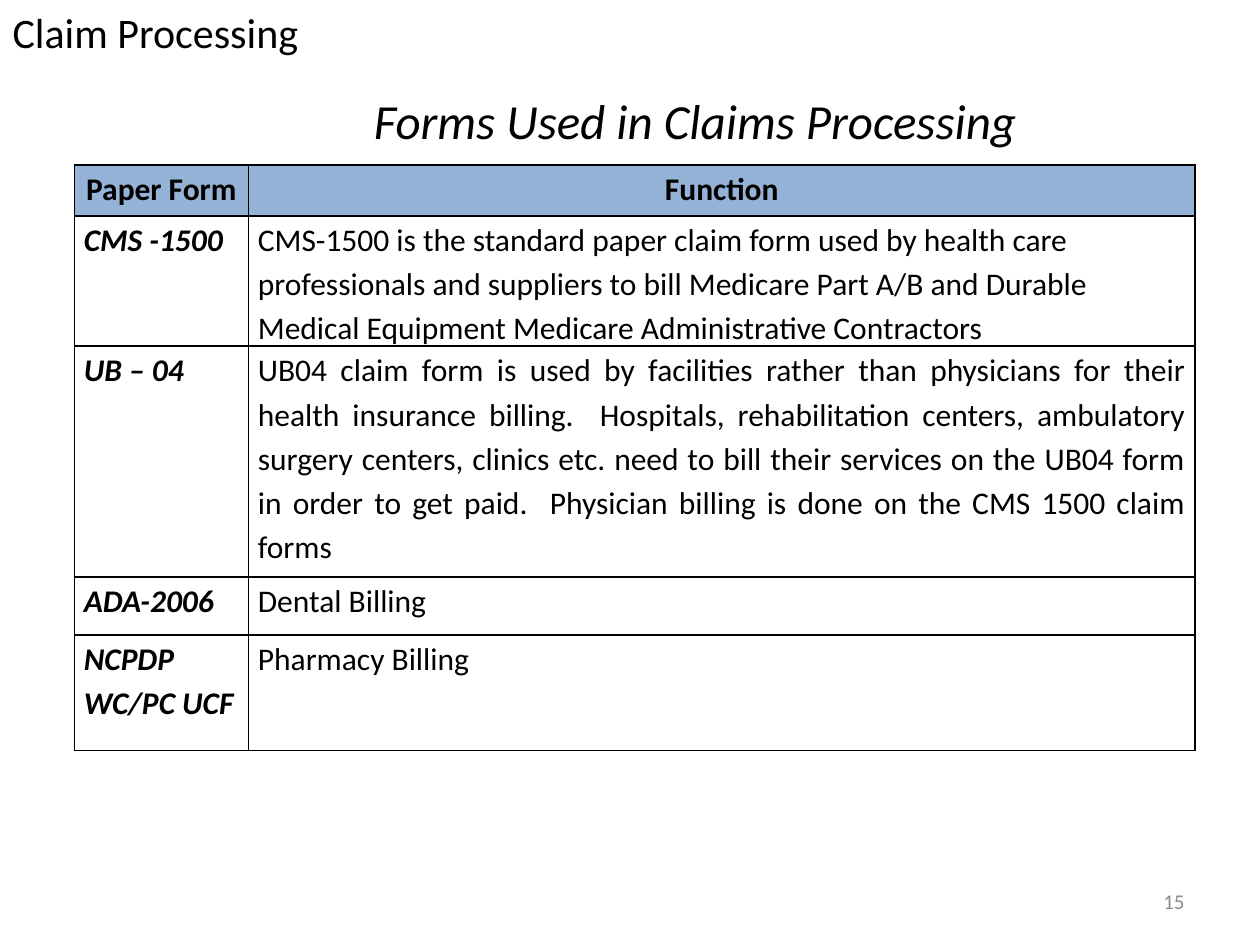
from lxml.etree import SubElement
from pptx import Presentation
from pptx.dml.color import RGBColor
from pptx.enum.text import MSO_ANCHOR, PP_ALIGN
from pptx.oxml.ns import qn
from pptx.util import Pt

# Content
TITLE = "Claim Processing"
SUBTITLE = "Forms Used in Claims Processing"
PAGE_NUMBER = "15"
HEADER = ("Paper Form", "Function")
FORMS = [
    ("CMS -1500", "CMS-1500 is the standard paper claim form used by health care "
     "professionals and suppliers to bill Medicare Part A/B and Durable "
     "Medical Equipment Medicare Administrative Contractors"),
    ("UB – 04", "UB04 claim form is used by facilities rather than physicians for "
     "their health insurance billing.  Hospitals, rehabilitation centers, "
     "ambulatory surgery centers, clinics etc. need to bill their services on "
     "the UB04 form in order to get paid.  Physician billing is done on the "
     "CMS 1500 claim forms"),
    ("ADA-2006", "Dental Billing"),
    ("NCPDP WC/PC UCF", "Pharmacy Billing"),
]
JUSTIFIED_FORM = "UB – 04"

# Layout and formats
TABLE_LEFT, TABLE_TOP = 42.5, 94.3
COLUMN_WIDTHS = (99.5, 541)
ROW_HEIGHTS = (29, 62, 132, 33, 66)
BLACK, GREY, HEADER_BLUE = "000000", "8C8C8C", "95B3D7"
HEADER_FORMAT = {"size": Pt(18), "bold": True, "italic": False}
NAME_FORMAT = {"size": Pt(18), "bold": True, "italic": True}
FUNCTION_FORMAT = {"size": Pt(18), "bold": False, "italic": False}


def color(hex_value):
    return RGBColor.from_string(hex_value)


def write(frame, text, formats, align=PP_ALIGN.LEFT, text_color=BLACK):
    para = frame.paragraphs[0]
    para.alignment = align
    span = para.add_run()
    span.text = text
    span.font.name = "Calibri"
    span.font.color.rgb = color(text_color)
    for name, value in formats.items():
        setattr(span.font, name, value)
    return para


def place(shape, left, top, width, height):
    bounds = {"left": left, "top": top, "width": width, "height": height}
    for name, value in bounds.items():
        setattr(shape, name, Pt(value))


def add_borders(cell):
    properties = cell._tc.get_or_add_tcPr()
    for position, side in enumerate(("a:lnL", "a:lnR", "a:lnT", "a:lnB")):
        line = SubElement(properties, qn(side), w=str(Pt(1)))
        fill = SubElement(line, qn("a:solidFill"))
        SubElement(fill, qn("a:srgbClr"), val=BLACK)
        properties.insert(position, line)


def fill_cell(cell, text, formats, align, fill_color=None):
    cell.margin_left = cell.margin_right = Pt(5.4)
    cell.margin_top = cell.margin_bottom = Pt(0)
    if fill_color:
        cell.fill.solid()
        cell.fill.fore_color.rgb = color(fill_color)
    else:
        cell.fill.background()
    write(cell.text_frame, text, formats, align).line_spacing = 1.15
    add_borders(cell)


def add_forms_table(page):
    table = page.shapes.add_table(
        len(ROW_HEIGHTS), len(COLUMN_WIDTHS), Pt(TABLE_LEFT), Pt(TABLE_TOP),
        Pt(sum(COLUMN_WIDTHS)), Pt(sum(ROW_HEIGHTS))).table
    for column, width in zip(table.columns, COLUMN_WIDTHS):
        column.width = Pt(width)
    for row, height in zip(table.rows, ROW_HEIGHTS):
        row.height = Pt(height)
    for index, text in enumerate(HEADER):
        fill_cell(table.cell(0, index), text, HEADER_FORMAT, PP_ALIGN.CENTER, HEADER_BLUE)
    for index, (name, function) in enumerate(FORMS, start=1):
        align = PP_ALIGN.JUSTIFY if name == JUSTIFIED_FORM else PP_ALIGN.LEFT
        fill_cell(table.cell(index, 0), name, NAME_FORMAT, PP_ALIGN.LEFT)
        fill_cell(table.cell(index, 1), function, FUNCTION_FORMAT, align)


def main():
    deck = Presentation()
    deck.slide_width, deck.slide_height = Pt(720), Pt(540)
    page = deck.slides.add_slide(deck.slide_layouts[5])

    # Title
    title = page.shapes.title
    place(title, 0, 0, 179.3, 36)
    title.text_frame.word_wrap = False
    title.text_frame.vertical_anchor = MSO_ANCHOR.TOP
    write(title.text_frame, TITLE, {"size": Pt(24)})

    # Subtitle
    subtitle = page.shapes.add_textbox(Pt(206.6), Pt(48.2), Pt(385.2), Pt(41))
    subtitle.text_frame.word_wrap = False
    write(subtitle.text_frame, SUBTITLE, {"size": Pt(28), "italic": True})

    # Table of forms
    add_forms_table(page)

    # Page number
    number = page.shapes.add_textbox(Pt(516), Pt(500.5), Pt(168), Pt(28.8))
    number.text_frame.word_wrap = True
    number.text_frame.vertical_anchor = MSO_ANCHOR.MIDDLE
    write(number.text_frame, PAGE_NUMBER, {"size": Pt(12)}, PP_ALIGN.RIGHT, GREY)

    deck.save("out.pptx")


if __name__ == "__main__":
    main()
